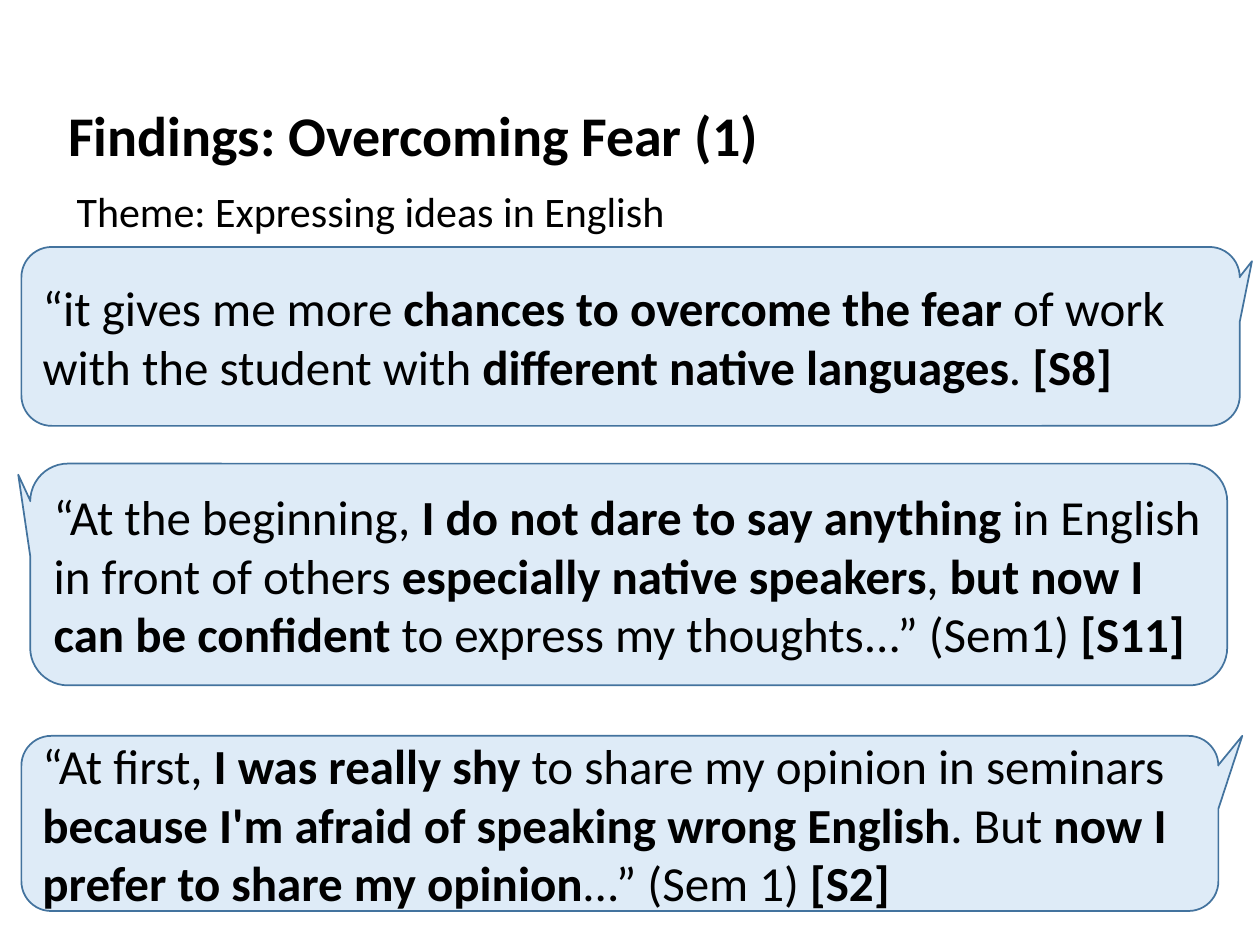
import dataclasses

import pptx
import pptx.dml.color
import pptx.enum.shapes
import pptx.enum.text
import pptx.util

Inches = pptx.util.Inches
Pt = pptx.util.Pt
RGB = pptx.dml.color.RGBColor
MSO_ANCHOR = pptx.enum.text.MSO_ANCHOR
PP_ALIGN = pptx.enum.text.PP_ALIGN


@dataclasses.dataclass(frozen=True)
class Theme:
    font: str = "Calibri"
    title: int = 32
    subtitle: int = 24
    quote: int = 28
    text: RGB = RGB(0x00, 0x00, 0x00)
    bubble: RGB = RGB(0xDE, 0xEB, 0xF7)
    outline: RGB = RGB(0x43, 0x73, 0x9E)


THEME = Theme()

QUOTES = [
    ((0.17, 1.96, 9.67, 1.42), (0.51, -0.42), [
        "“it gives me more ", "chances to overcome the fear ",
        "of work with the student with ", "different native languages",
        ". ", "[S8]"]),
    ((0.24, 3.68, 9.5, 1.76), (-0.51, -0.45), [
        "“At the beginning,", " I do not dare to say anything ",
        "in English in front of others ", "especially native speakers",
        ", ", "but now I can be confident",
        " to express my thoughts...” (Sem1) ", "[S11]"]),
    ((0.17, 5.84, 9.5, 1.39), (0.52, -0.5), [
        "“At first, ", "I was really shy ",
        "to share my opinion in seminars ",
        "because I'm afraid of speaking wrong English",
        ". But ", "now I prefer to share my opinion",
        "...” (Sem 1) ", "[S2]"]),
]


def to_emu(box):
    return [Inches(v) for v in box]


def style(p, size):
    p.alignment = PP_ALIGN.LEFT
    p.font.name = THEME.font
    p.font.size = Pt(size)
    p.font.color.rgb = THEME.text


def add_title(s, box, text):
    sp = s.shapes.title
    sp.left, sp.top, sp.width, sp.height = to_emu(box)
    tf = sp.text_frame
    tf.auto_size = pptx.enum.text.MSO_AUTO_SIZE.NONE
    tf.vertical_anchor = MSO_ANCHOR.TOP
    tf.margin_left = Inches(0.2)
    p = tf.paragraphs[0]
    p.text = text
    style(p, THEME.title)
    p.font.bold = True


def add_subtitle(s, box, text):
    tf = s.shapes.add_textbox(*to_emu(box)).text_frame
    tf.word_wrap = True
    p = tf.paragraphs[0]
    p.text = text
    p.line_spacing = 0.9
    style(p, THEME.subtitle)


def add_quote(s, box, tip, parts):
    sp = s.shapes.add_shape(
        pptx.enum.shapes.MSO_SHAPE.ROUNDED_RECTANGULAR_CALLOUT, *to_emu(box))
    sp.shadow.inherit = False
    sp.adjustments[0], sp.adjustments[1] = tip
    sp.adjustments[2] = 0.17
    sp.fill.solid()
    sp.fill.fore_color.rgb = THEME.bubble
    sp.line.color.rgb = THEME.outline
    sp.line.width = Pt(1)
    tf = sp.text_frame
    tf.word_wrap = True
    tf.vertical_anchor = MSO_ANCHOR.MIDDLE
    p = tf.paragraphs[0]
    style(p, THEME.quote)
    for i, part in enumerate(parts):
        r = p.add_run()
        r.text = part
        r.font.bold = i % 2 == 1


def main():
    prs = pptx.Presentation()
    prs.slide_width, prs.slide_height = Inches(10), Inches(7.5)
    s = prs.slides.add_slide(prs.slide_layouts.get_by_name("Title Only"))
    add_title(s, (0.34, 0.75, 7.46, 0.91), "Findings: Overcoming Fear (1)")
    add_subtitle(s, (0.51, 1.47, 9.34, 5.12),
                 "Theme: Expressing ideas in English")
    for box, tip, parts in reversed(QUOTES):
        add_quote(s, box, tip, parts)
    prs.save("out.pptx")


if __name__ == "__main__":
    main()
